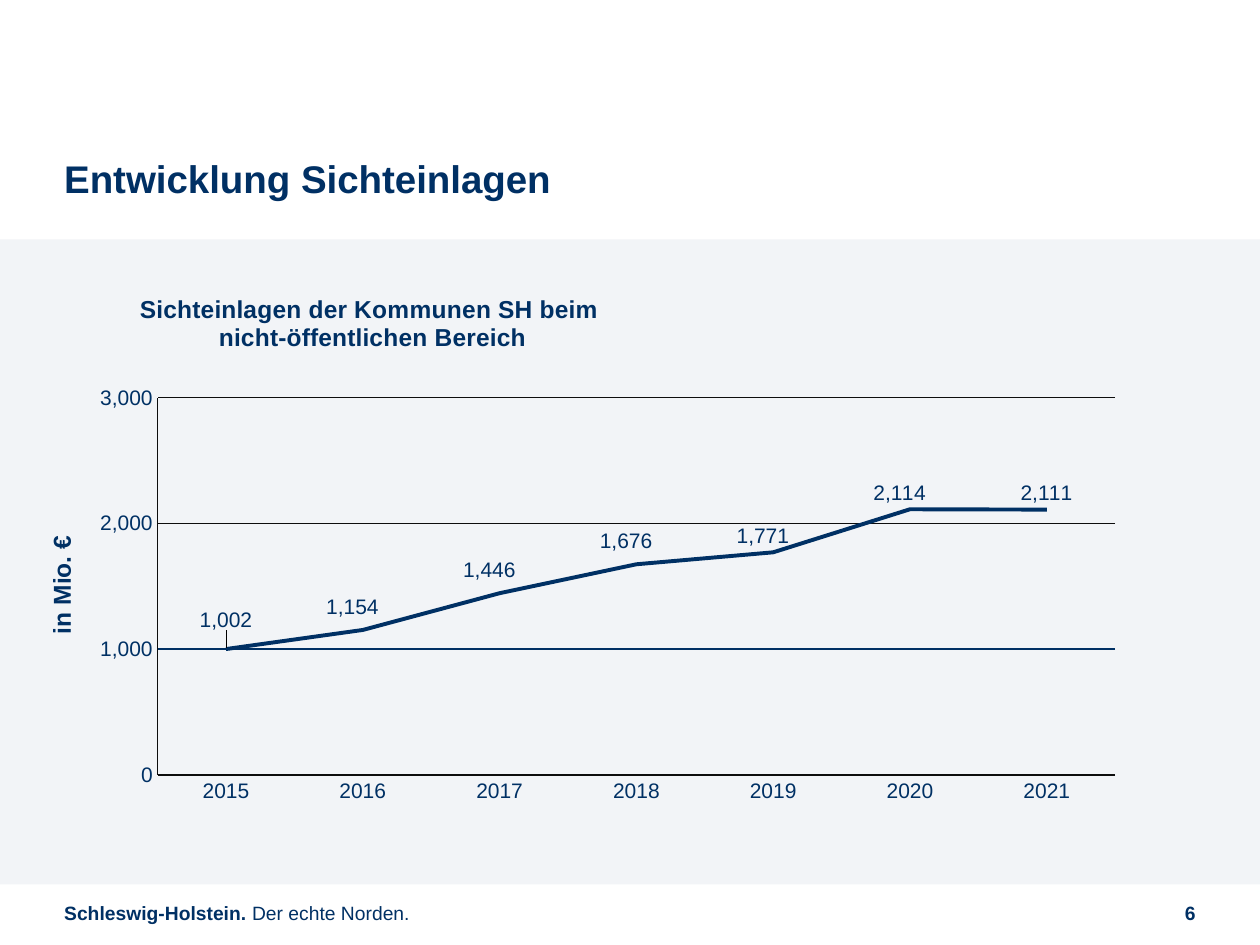
from lxml import etree
from pptx import Presentation
from pptx import util as u
from pptx.chart import data
from pptx.dml.color import RGBColor
from pptx.enum import chart as ch, shapes, text
from pptx.oxml import parse_xml
from pptx.oxml.ns import nsdecls, qn

INK = {"navy": "003064", "pale": "F2F4F7", "line": "0D0D0D"}
hue = {name: RGBColor.from_string(code) for name, code in INK.items()}


def write(frame, *runs, size, align=None, anchor=None, wrap=False, inset=0):
    frame.word_wrap = wrap
    if anchor is not None:
        frame.vertical_anchor = anchor
    if inset is not None:
        frame.margin_left = frame.margin_right = u.Inches(inset)
        frame.margin_top = frame.margin_bottom = u.Inches(inset)
    para = frame.paragraphs[0]
    para.alignment = align
    for words, bold in runs:
        run = para.add_run()
        run.text = words
        run.font.name, run.font.size, run.font.bold = "Arial", u.Pt(size), bold
        run.font.color.rgb = hue["navy"]


def layout(**parts):
    tags = "".join(f'<c:{key} val="{val}"/>' for key, val in parts.items())
    return parse_xml(f'<c:layout {nsdecls("c")}><c:manualLayout>{tags}</c:manualLayout></c:layout>')


deck = Presentation()
deck.slide_width, deck.slide_height = u.Inches(10), u.Inches(7.5)
slide = deck.slides.add_slide(deck.slide_layouts[6])
items = slide.shapes

panel = items.add_shape(shapes.MSO_SHAPE.RECTANGLE, 0, u.Inches(1.9), u.Inches(10), u.Inches(5.12))
panel.shadow.inherit = False
panel.fill.solid()
panel.fill.fore_color.rgb = hue["pale"]
panel.line.fill.background()

mid = text.MSO_ANCHOR.MIDDLE
slogan = items.add_textbox(u.Inches(0.51), u.Inches(7.1), u.Inches(3.23), u.Inches(0.29))
write(slogan.text_frame, ("Schleswig-Holstein.", True), (" Der echte Norden.", False), size=11, anchor=mid)
page = items.add_textbox(u.Inches(8.7), u.Inches(7.1), u.Inches(0.79), u.Inches(0.29))
write(page.text_frame, ("6", True), size=11, align=text.PP_ALIGN.RIGHT, anchor=mid)
head = items.add_textbox(u.Inches(0.51), u.Inches(0.6), u.Inches(6.54), u.Inches(1))
write(head.text_frame, ("Entwicklung Sichteinlagen", True), size=22, anchor=text.MSO_ANCHOR.BOTTOM, wrap=True)

sums = data.CategoryChartData(number_format="#,##0")
sums.categories = [str(year) for year in range(2015, 2022)]
sums.add_series("Series 1", [1002, 1154, 1446, 1676, 1771, 2114, 2111])
frame = items.add_chart(ch.XL_CHART_TYPE.LINE, u.Inches(0.67), u.Inches(1.78), u.Inches(8.19), u.Inches(5.2), sums)
chart = frame.chart
chart.has_legend = False
chart.font.name, chart.font.size = "Arial", u.Pt(10)
chart.font.color.rgb = hue["navy"]

chart.has_title = True
title = chart.chart_title
title.include_in_layout = False
title.text_frame.text = "Sichteinlagen der Kommunen SH beim \nnicht-öffentlichen Bereich"
for para in title.text_frame.paragraphs:
    for run in para.runs:
        run.font.name, run.font.size, run.font.bold = "Arial", u.Pt(14), True
        run.font.color.rgb = hue["navy"]
tree = title._element
for old in tree.findall(qn("c:layout")):
    tree.remove(old)
tree.find(qn("c:tx")).addnext(layout(xMode="edge", yMode="edge", x=0.05, y=0.1))

area = chart._chartSpace.chart.plotArea
for old in area.findall(qn("c:layout")):
    area.remove(old)
area.insert(0, layout(layoutTarget="inner", xMode="edge", yMode="edge", x=0.071, y=0.265, w=0.928, h=0.576))

value = chart.value_axis
value.minimum_scale, value.maximum_scale, value.major_unit = 0, 3000, 1000
value.has_major_gridlines = True
value.tick_labels.number_format = "#,##0"
value.tick_labels.number_format_is_linked = False
for axis in (chart.category_axis, value):
    axis.major_tick_mark = axis.minor_tick_mark = ch.XL_TICK_MARK.NONE
    font = axis.tick_labels.font
    font.name, font.size = "Arial", u.Pt(12)
    font.color.rgb = hue["navy"]
for part in (chart.category_axis, value, value.major_gridlines):
    part.format.line.width = u.Pt(0.75)
    part.format.line.color.rgb = hue["line"]

plot = chart.plots[0]
plot.vary_by_categories = False
curve = plot.series[0]
curve.smooth = False
curve.marker.style = ch.XL_MARKER_STYLE.NONE
curve.format.line.width = u.Pt(2.25)
curve.format.line.color.rgb = hue["navy"]
tags = curve.data_labels
tags.show_value = True
tags.number_format, tags.number_format_is_linked = "#,##0", False

shifts = [(0, -0.02), (-0.01, -0.01), (-0.01, -0.01), (-0.01, -0.01), (-0.01, 0), (-0.01, 0), (0, 0)]
spots = [curve.points[i].data_label for i in range(len(shifts))]
for label in [tags, *spots]:
    label.position = ch.XL_LABEL_POSITION.ABOVE
    label.font.name, label.font.size = "Arial", u.Pt(12)
    label.font.color.rgb = hue["navy"]
for node, (x, y) in zip(tags._element.findall(qn("c:dLbl")), shifts):
    node.find(qn("c:idx")).addnext(layout(x=x, y=y))

mark = items.add_connector(shapes.MSO_CONNECTOR.STRAIGHT, u.Inches(1.25), u.Inches(5.15), u.Inches(8.85), u.Inches(5.15))
mark.line.width = u.Pt(1.25)
mark.line.color.rgb = hue["navy"]
etree.SubElement(mark._element.spPr, qn("a:effectLst"))

unit = items.add_textbox(u.Inches(-0.26), u.Inches(4.21), u.Inches(1.5), u.Inches(0.34))
unit.rotation = 270
write(unit.text_frame, ("in Mio. €", True), size=14, wrap=True, inset=None)

deck.save("out.pptx")
